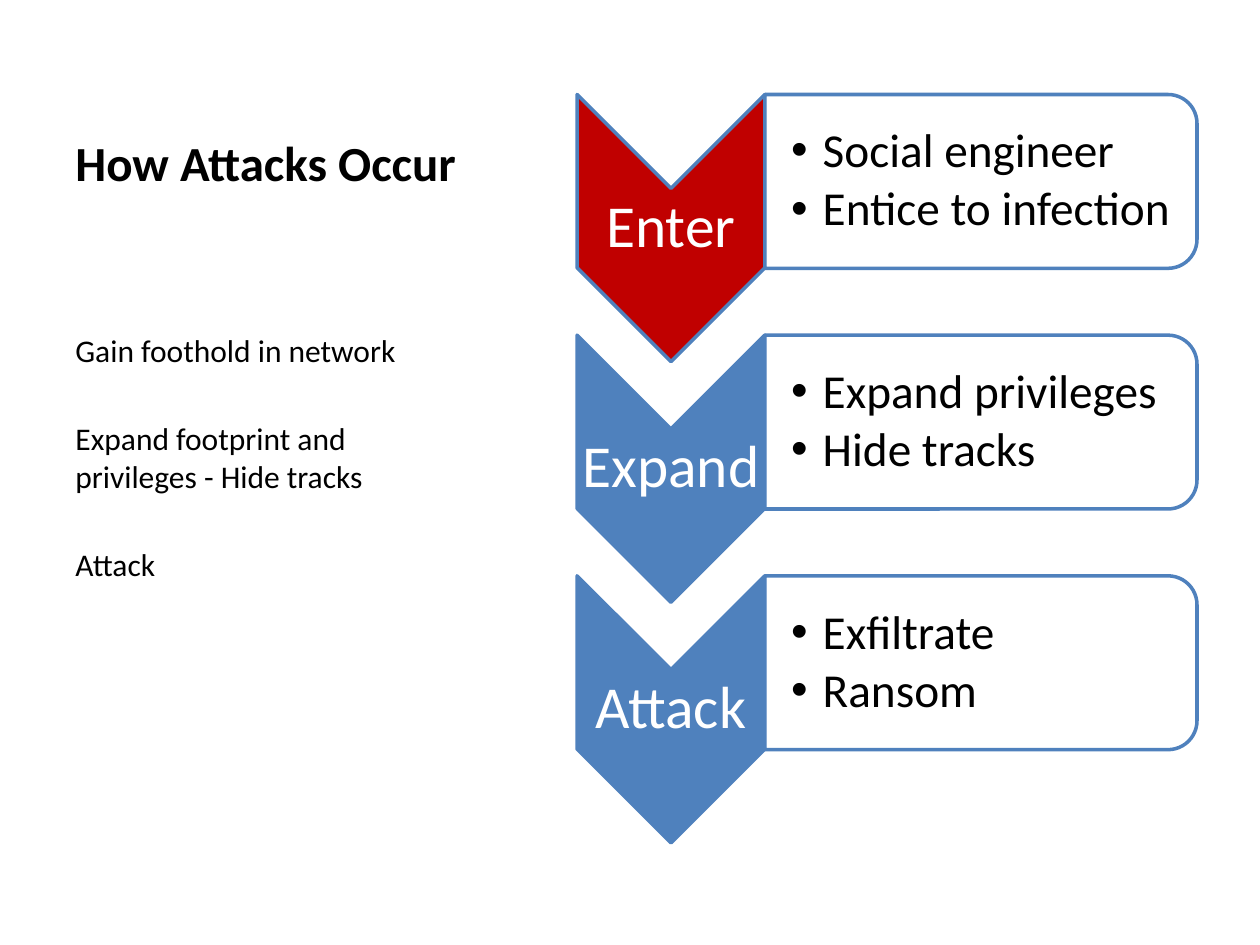
import pptx
import pptx.util
import pptx.dml.color
import pptx.enum.shapes
import pptx.enum.text
import pptx.oxml.ns
from lxml import etree

Inches, Pt = pptx.util.Inches, pptx.util.Pt
RGBColor = pptx.dml.color.RGBColor
SHAPE = pptx.enum.shapes.MSO_SHAPE
ANCHOR = pptx.enum.text.MSO_ANCHOR
ALIGN = pptx.enum.text.PP_ALIGN
qn = pptx.oxml.ns.qn

RED = RGBColor(0xC0, 0x00, 0x00)
BLUE = RGBColor(0x4F, 0x81, 0xBD)
WHITE = RGBColor(0xFF, 0xFF, 0xFF)
BLACK = RGBColor(0x00, 0x00, 0x00)
FONT = "Calibri"

TITLE = "How Attacks Occur"
SUMMARY = [
    "Gain foothold in network",
    "Expand footprint and privileges - Hide tracks",
    "Attack",
]
STAGES = [
    ("Enter", RED, ["Social engineer", "Entice to infection"]),
    ("Expand", BLUE, ["Expand privileges", "Hide tracks"]),
    ("Attack", BLUE, ["Exfiltrate", "Ransom"]),
]

LEFT_COLUMN, LEFT_WIDTH = 0.5, 3.29
STAGE_TOP, STAGE_PITCH = 0.75, 1.91
CHEVRON_LEFT, CHEVRON_WIDTH, CHEVRON_HEIGHT = 4.58, 1.49, 2.12
PANEL_LEFT = CHEVRON_LEFT + CHEVRON_WIDTH
PANEL_WIDTH, PANEL_HEIGHT = 3.43, 1.38
LABEL_HEIGHT = 0.64
DETAIL_WIDTH, DETAIL_HEIGHT = 3.36, 1.25


def add_turned_shape(slide, kind, left, top, width, height, color):
    """Add a shape turned a quarter clockwise; the box given is the one it shows in."""
    shift = (width - height) / 2
    shape = slide.shapes.add_shape(
        kind, Inches(left + shift), Inches(top - shift), Inches(height), Inches(width))
    shape.rotation = 90
    shape.shadow.inherit = False
    shape.fill.solid()
    shape.fill.fore_color.rgb = color
    shape.line.color.rgb = BLUE
    shape.line.width = Pt(2)
    return shape


def set_opacity(shape, percent):
    color = shape.fill._xPr.find(qn("a:solidFill"))[0]
    etree.SubElement(color, qn("a:alpha")).set("val", str(percent * 1000))


def add_text(slide, box, lines, size, color=BLACK, bold=False, anchor=ANCHOR.TOP,
             insets=(0.1, 0.05, 0.1, 0.05), align=ALIGN.LEFT, spacing=1, gap=0,
             bullet=False):
    frame = slide.shapes.add_textbox(*map(Inches, box)).text_frame
    frame.word_wrap = True
    frame.vertical_anchor = anchor
    (frame.margin_left, frame.margin_top,
     frame.margin_right, frame.margin_bottom) = map(Inches, insets)
    frame.text = "\n".join(lines)
    for index, paragraph in enumerate(frame.paragraphs):
        paragraph.alignment = align
        paragraph.line_spacing = spacing
        if index:
            paragraph.space_before = Pt(gap)
        if bullet:
            properties = paragraph._p.get_or_add_pPr()
            properties.set("marL", str(Inches(0.25)))
            properties.set("indent", str(-Inches(0.25)))
            etree.SubElement(properties, qn("a:buFont")).set("typeface", "Arial")
            etree.SubElement(properties, qn("a:buChar")).set("char", "•")
        for run in paragraph.runs:
            run.font.name = FONT
            run.font.size = Pt(size)
            run.font.bold = bold
            run.font.color.rgb = color


def add_stage(slide, top, label, color, details):
    add_turned_shape(slide, SHAPE.CHEVRON, CHEVRON_LEFT, top,
                     CHEVRON_WIDTH, CHEVRON_HEIGHT, color)
    label_top = top + (CHEVRON_HEIGHT - LABEL_HEIGHT) / 2
    add_text(slide, (CHEVRON_LEFT, label_top, CHEVRON_WIDTH, LABEL_HEIGHT), [label],
             34, WHITE, anchor=ANCHOR.MIDDLE, insets=[0.02] * 4,
             align=ALIGN.CENTER, spacing=0.9)
    panel = add_turned_shape(slide, SHAPE.ROUND_2_SAME_RECTANGLE, PANEL_LEFT, top,
                             PANEL_WIDTH, PANEL_HEIGHT, WHITE)
    set_opacity(panel, 90)
    detail_top = top + (PANEL_HEIGHT - DETAIL_HEIGHT) / 2
    add_text(slide, (PANEL_LEFT, detail_top, DETAIL_WIDTH, DETAIL_HEIGHT), details,
             27, anchor=ANCHOR.MIDDLE, insets=(0.21, 0.02, 0.02, 0.02),
             spacing=0.9, gap=4, bullet=True)


def main():
    deck = pptx.Presentation()
    deck.slide_width, deck.slide_height = Inches(10), Inches(7.5)
    slide = deck.slides.add_slide(deck.slide_layouts[6])
    add_text(slide, (LEFT_COLUMN, 0.3, LEFT_WIDTH, 1.27), [TITLE], 28,
             bold=True, anchor=ANCHOR.BOTTOM)
    add_text(slide, (LEFT_COLUMN, 2.58, LEFT_WIDTH, 1.42), SUMMARY, 18, gap=28.8)
    for row, stage in enumerate(STAGES):
        add_stage(slide, STAGE_TOP + row * STAGE_PITCH, *stage)
    deck.save("out.pptx")


if __name__ == "__main__":
    main()
